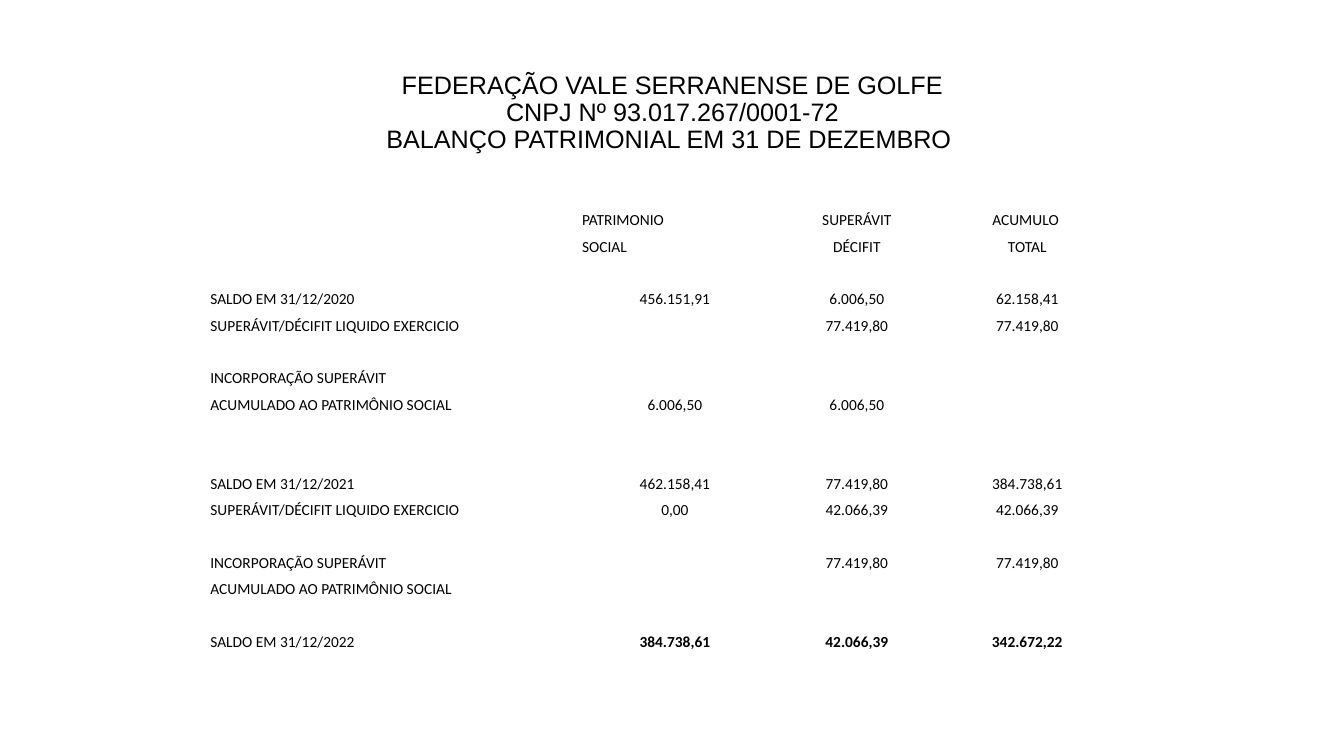
from dataclasses import dataclass

from lxml.etree import SubElement
from pptx import Presentation
from pptx.dml.color import RGBColor
from pptx.enum.text import MSO_ANCHOR, MSO_AUTO_SIZE, PP_ALIGN
from pptx.oxml.ns import qn
from pptx.util import Cm, Pt

# Content
HEADING = (
    "FEDERAÇÃO VALE SERRANENSE DE GOLFE\n"
    "CNPJ Nº 93.017.267/0001-72\n"
    "BALANÇO PATRIMONIAL EM 31 DE DEZEMBRO "
)
BLANK = ("", "", "", "")
BALANCE = [
    ("", "PATRIMONIO", "SUPERÁVIT", "ACUMULO "),
    ("", "SOCIAL", "DÉCIFIT", "TOTAL"),
    BLANK,
    ("SALDO EM 31/12/2020", "456.151,91", "6.006,50", "62.158,41"),
    ("SUPERÁVIT/DÉCIFIT LIQUIDO EXERCICIO", "", "77.419,80", "77.419,80"),
    BLANK,
    ("INCORPORAÇÃO SUPERÁVIT", "", "", ""),
    ("ACUMULADO AO PATRIMÔNIO SOCIAL", "6.006,50", "6.006,50", ""),
    BLANK,
    BLANK,
    ("SALDO EM 31/12/2021", "462.158,41", "77.419,80", "384.738,61"),
    ("SUPERÁVIT/DÉCIFIT LIQUIDO EXERCICIO", "0,00", "42.066,39", "42.066,39"),
    BLANK,
    ("INCORPORAÇÃO SUPERÁVIT", "", "77.419,80", "77.419,80"),
    ("ACUMULADO AO PATRIMÔNIO SOCIAL", "", "", ""),
    BLANK,
    ("SALDO EM 31/12/2022", "384.738,61", "42.066,39", "342.672,22"),
]
HEADER_ROWS = 2
TOTAL_ROW = len(BALANCE) - 1


@dataclass(frozen=True)
class Theme:
    ink: RGBColor = RGBColor(0, 0, 0)
    heading_font: str = "Arial"
    table_font: str = "Calibri"
    heading_size: int = 18
    table_size: int = 11


THEME = Theme()

# Layout
COLUMN_WIDTHS = [Cm(9.37), Cm(4.72), Cm(4.45), Cm(4.14)]
TABLE_LEFT, TABLE_TOP, TABLE_HEIGHT = Cm(5.28), Cm(5.13), Cm(11.3)
CELL_MARGIN = Cm(0.02)


def write(frame, text, *, font, size, align=PP_ALIGN.LEFT, bold=False, line_spacing=None):
    """Fill a text frame; line breaks and empty lines take the type size too."""
    paragraph = frame.paragraphs[0]
    paragraph.text = text.replace("\n", "\v")
    paragraph.alignment = align
    paragraph.line_spacing = line_spacing
    for run in paragraph.runs:
        run.font.name = font
        run.font.size = Pt(size)
        run.font.bold = bold
        run.font.color.rgb = THEME.ink
    for line_break in paragraph._p.findall(qn("a:br")):
        SubElement(line_break, qn("a:rPr"), sz=str(size * 100))
    SubElement(paragraph._p, qn("a:endParaRPr"), sz=str(size * 100))


def add_heading(slide):
    title = slide.shapes.title
    title.left, title.top, title.width, title.height = Cm(2.34), Cm(1.02), Cm(29.21), Cm(3.68)
    frame = title.text_frame
    frame.auto_size = MSO_AUTO_SIZE.NONE
    frame.vertical_anchor = MSO_ANCHOR.MIDDLE
    write(frame, HEADING, font=THEME.heading_font, size=THEME.heading_size,
          align=PP_ALIGN.CENTER, line_spacing=0.9)


def add_balance(slide):
    balance = slide.shapes.add_table(
        len(BALANCE), len(COLUMN_WIDTHS), TABLE_LEFT, TABLE_TOP,
        sum(COLUMN_WIDTHS), TABLE_HEIGHT,
    ).table
    balance.first_row = balance.horz_banding = False
    for column, width in zip(balance.columns, COLUMN_WIDTHS):
        column.width = width
    for r, entries in enumerate(BALANCE):
        for c, entry in enumerate(entries):
            cell = balance.cell(r, c)
            cell.fill.background()
            cell.vertical_anchor = MSO_ANCHOR.BOTTOM
            cell.margin_left = cell.margin_right = cell.margin_top = CELL_MARGIN
            cell.margin_bottom = 0
            # Labels and the first column heading sit left, all else is centred
            at_left = c == 0 or (c == 1 and r < HEADER_ROWS)
            write(cell.text_frame, entry, font=THEME.table_font, size=THEME.table_size,
                  align=PP_ALIGN.LEFT if at_left else PP_ALIGN.CENTER,
                  bold=r == TOTAL_ROW and c > 0)


def main():
    deck = Presentation()
    deck.slide_width, deck.slide_height = Cm(33.87), Cm(19.05)
    slide = deck.slides.add_slide(deck.slide_layouts[5])
    add_heading(slide)
    add_balance(slide)
    deck.save("out.pptx")


if __name__ == "__main__":
    main()
